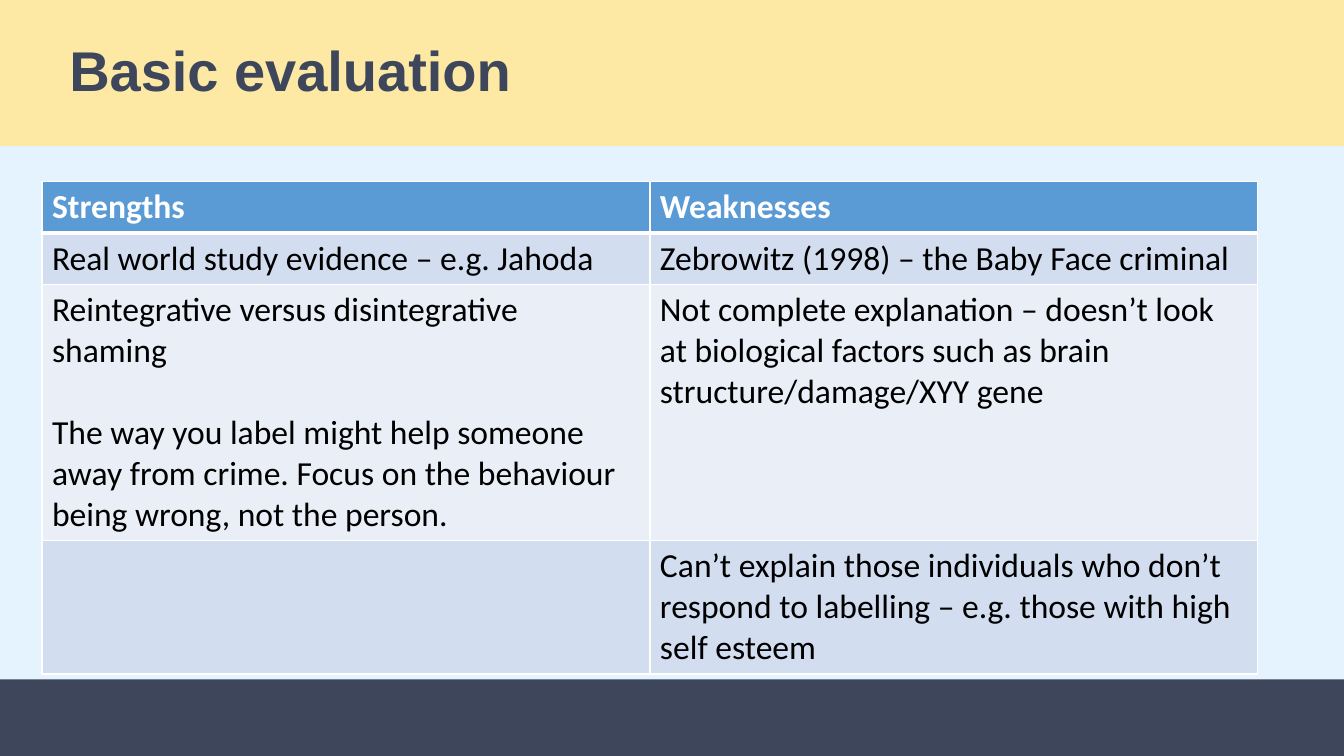
"""Build the evaluation slide with its table of strengths and weaknesses."""
from lxml import etree
from pptx import Presentation, util as u
from pptx.dml import color
from pptx.enum import shapes, text
from pptx.oxml import ns

PX = 9525
WIDE, HIGH = 1280, 720
NAVY, CREAM, SKY = "3D465A", "FEE9A4", "E5F3FF"
BLUE, PALE, MIST = "5B9BD5", "D2DEEF", "EAEFF7"
WHITE, BLACK = "FFFFFF", "000000"

ROWS = [
    (49, BLUE, ["Strengths"], ["Weaknesses"]),
    (49, PALE, ["Real world study evidence – e.g. Jahoda"],
     ["Zebrowitz (1998) – the Baby Face criminal"]),
    (244, MIST, ["Reintegrative versus disintegrative shaming",
                 "The way you label might help someone away from crime. "
                 "Focus on the behaviour being wrong, not the person."],
     ["Not complete explanation – doesn’t look at biological factors "
      "such as brain structure/damage/XYY gene"]),
    (127, PALE, [], ["Can’t explain those individuals who don’t respond to "
                     "labelling – e.g. those with high self esteem"]),
]


def rgb(code):
    """Turn a hex string into a colour."""
    return color.RGBColor.from_string(code)


def emu(*sizes):
    """Turn px into EMU."""
    return [u.Emu(size * PX) for size in sizes]


def paint(fill, code):
    """Give a fill one solid colour."""
    fill.solid()
    fill.fore_color.rgb = rgb(code)


def write(frame, lines, size=24, font="Calibri", tint=BLACK, bold=False,
          gap=0, lead=1.0):
    """Write one paragraph per line in the given format."""
    for i, line in enumerate(lines):
        para = frame.add_paragraph() if i else frame.paragraphs[0]
        para.alignment = text.PP_ALIGN.LEFT
        para.line_spacing = lead
        if i:
            para.space_before = u.Pt(gap)
        run = para.add_run()
        run.text = line
        run.font.size, run.font.name = u.Pt(size), font
        run.font.bold, run.font.color.rgb = bold, rgb(tint)


def band(slide, box, code):
    """Draw a plain full-width band."""
    shape = slide.shapes.add_shape(shapes.MSO_SHAPE.RECTANGLE, *emu(*box))
    shape.shadow.inherit = False
    paint(shape.fill, code)
    shape.line.fill.background()
    return shape


def header(slide, box, title):
    """Draw the title band."""
    frame = band(slide, box, CREAM).text_frame
    frame.word_wrap = True
    frame.vertical_anchor = text.MSO_ANCHOR.MIDDLE
    frame.margin_left = emu(66)[0]
    write(frame, [title], size=40, font="Arial", tint=NAVY, bold=True, lead=0.9)


def edge(cell, side, width):
    """Give one side of a cell a white line."""
    line = etree.SubElement(cell._tc.get_or_add_tcPr(), ns.qn("a:ln" + side),
                            w=str(u.Pt(width)))
    fill = etree.SubElement(line, ns.qn("a:solidFill"))
    etree.SubElement(fill, ns.qn("a:srgbClr"), val=WHITE)


def grid(slide, box, rows):
    """Draw the table with a header row and equal columns."""
    count = len(rows[0]) - 2
    table = slide.shapes.add_table(len(rows), count, *emu(*box)).table
    for col in table.columns:
        col.width = emu(box[2] // count)[0]
    for r, (tall, code, *cells) in enumerate(rows):
        table.rows[r].height = emu(tall)[0]
        for c, lines in enumerate(cells):
            cell = table.cell(r, c)
            for side in "LRTB":
                thick = (r, side) in ((0, "B"), (1, "T"))
                edge(cell, side, 3 if thick else 1)
            paint(cell.fill, code)
            write(cell.text_frame, lines, tint=BLACK if r else WHITE,
                  bold=r == 0, gap=29)


def main():
    """Build and save the slide."""
    deck = Presentation()
    deck.slide_width, deck.slide_height = emu(WIDE, HIGH)
    slide = deck.slides.add_slide(deck.slide_layouts[6])
    paint(slide.background.fill, SKY)
    band(slide, (0, 647, WIDE, HIGH - 647), NAVY)
    header(slide, (0, 0, WIDE, 139), "Basic evaluation")
    grid(slide, (40, 173, 1158, sum(row[0] for row in ROWS)), ROWS)
    deck.save("out.pptx")


if __name__ == "__main__":
    main()
